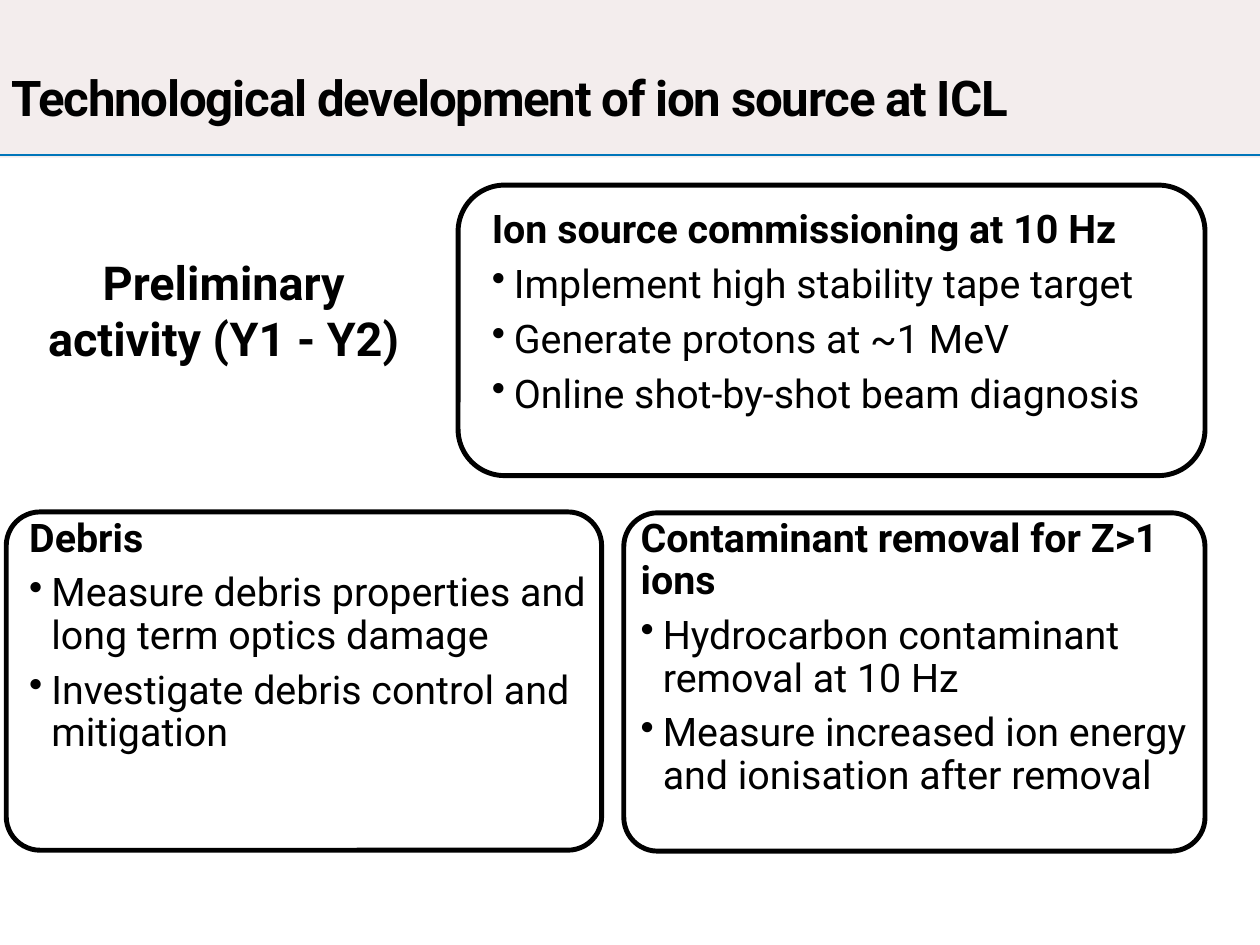
from dataclasses import dataclass

from lxml import etree
from pptx import Presentation
from pptx import util as u
from pptx.dml.color import RGBColor
from pptx.enum import shapes, text
from pptx.oxml import ns

HEADING = "Technological development of ion source at ICL"
PHASE = "Preliminary activity (Y1 - Y2)"
ACTIVITIES = [
    {
        "topic": "Ion source commissioning at 10 Hz",
        "tasks": [
            "Implement high stability tape target",
            "Generate protons at ~1 MeV",
            "Online shot-by-shot beam diagnosis",
        ],
        "words": (549, 231, 788, 290),
        "outline": (517, 209, 843, 328),
    },
    {
        "topic": "Debris",
        "tasks": [
            "Measure debris properties and long term optics damage",
            "Investigate debris control and mitigation",
        ],
        "words": (27, 579, 662, 425),
        "outline": (7, 578, 672, 382),
    },
    {
        "topic": "Contaminant removal for Z>1 ions",
        "tasks": [
            "Hydrocarbon contaminant removal at 10 Hz",
            "Measure increased ion energy and ionisation after removal",
        ],
        "words": (717, 579, 635, 425),
        "outline": (704, 579, 656, 382),
    },
]


@dataclass(frozen=True)
class Theme:
    face: str = "Roboto"
    ink: RGBColor = RGBColor(0, 0, 0)
    band: RGBColor = RGBColor(0xF3, 0xED, 0xED)
    rule: RGBColor = RGBColor(0x00, 0x76, 0xBA)
    heading: int = 40
    phase: int = 38
    body: int = 32


THEME = Theme()
PX = 9144
WIDTH, HEIGHT = 1422, 1067
BAND_BOTTOM, RULE_Y = 178, 175
INSET, INDENT, CORNER = 6, 25, 52


def px(*lengths):
    return [u.Emu(length * PX) for length in lengths]


def prepare(frame, anchor=text.MSO_ANCHOR.TOP):
    frame.word_wrap = True
    frame.auto_size = text.MSO_AUTO_SIZE.NONE
    frame.vertical_anchor = anchor
    (inset,) = px(INSET)
    frame.margin_left = frame.margin_right = inset
    frame.margin_top = frame.margin_bottom = inset


def style(paragraph, size, bold):
    font = paragraph.font
    font.name, font.size, font.bold = THEME.face, u.Pt(size), bold
    font.color.rgb = THEME.ink


def add_bullet(paragraph):
    props = paragraph._p.get_or_add_pPr()
    props.set("marL", str(INDENT * PX))
    props.set("indent", str(-INDENT * PX))
    etree.SubElement(props, ns.qn("a:buChar")).set("char", "•")


def add_heading(slide):
    heading = slide.shapes.title
    heading.left, heading.top, heading.width, heading.height = px(7, 83, 1269, 111)
    prepare(heading.text_frame)
    heading.text_frame.text = HEADING
    paragraph = heading.text_frame.paragraphs[0]
    paragraph.alignment = text.PP_ALIGN.LEFT
    paragraph.line_spacing = 0.8
    style(paragraph, THEME.heading, True)
    paragraph.runs[0]._r.get_or_add_rPr().set("spc", "-100")

    band = slide.shapes.add_shape(
        shapes.MSO_SHAPE.RECTANGLE, *px(0, 0, WIDTH, BAND_BOTTOM))
    band.shadow.inherit = False
    band.fill.solid()
    band.fill.fore_color.rgb = THEME.band
    band.line.fill.background()
    rule = slide.shapes.add_connector(
        shapes.MSO_CONNECTOR.STRAIGHT, *px(0, RULE_Y, WIDTH, RULE_Y))
    rule.line.color.rgb = THEME.rule
    rule.line.width = u.Pt(2)
    etree.SubElement(rule.element.spPr, ns.qn("a:effectLst"))
    for backdrop in (band, rule):
        heading.element.addprevious(backdrop.element)


def add_phase(slide):
    frame = slide.shapes.add_textbox(*px(35, 280, 435, 139)).text_frame
    prepare(frame, text.MSO_ANCHOR.MIDDLE)
    frame.auto_size = text.MSO_AUTO_SIZE.SHAPE_TO_FIT_TEXT
    frame.text = PHASE
    frame.paragraphs[0].alignment = text.PP_ALIGN.CENTER
    style(frame.paragraphs[0], THEME.phase, True)


def add_words(slide, activity):
    frame = slide.shapes.add_textbox(*px(*activity["words"])).text_frame
    prepare(frame)
    topic = frame.paragraphs[0]
    topic.text = activity["topic"]
    topic.line_spacing = 0.9
    style(topic, THEME.body, True)
    for wording in activity["tasks"]:
        task = frame.add_paragraph()
        task.text = wording
        task.line_spacing = 0.9
        task.space_before = u.Pt(10)
        add_bullet(task)
        style(task, THEME.body, False)


def add_outline(slide, activity):
    left, top, width, height = activity["outline"]
    outline = slide.shapes.add_shape(
        shapes.MSO_SHAPE.ROUNDED_RECTANGLE, *px(left, top, width, height))
    outline.adjustments[0] = 0.16 if height < 350 else 0.1
    outline.shadow.inherit = False
    outline.fill.background()
    outline.line.color.rgb = THEME.ink
    outline.line.width = u.Pt(4)


def main():
    deck = Presentation()
    deck.slide_width, deck.slide_height = px(WIDTH, HEIGHT)
    slide = deck.slides.add_slide(deck.slide_layouts[5])
    add_heading(slide)
    add_phase(slide)
    for add_part in (add_words, add_outline):
        for activity in ACTIVITIES:
            add_part(slide, activity)
    deck.save("out.pptx")


if __name__ == "__main__":
    main()
